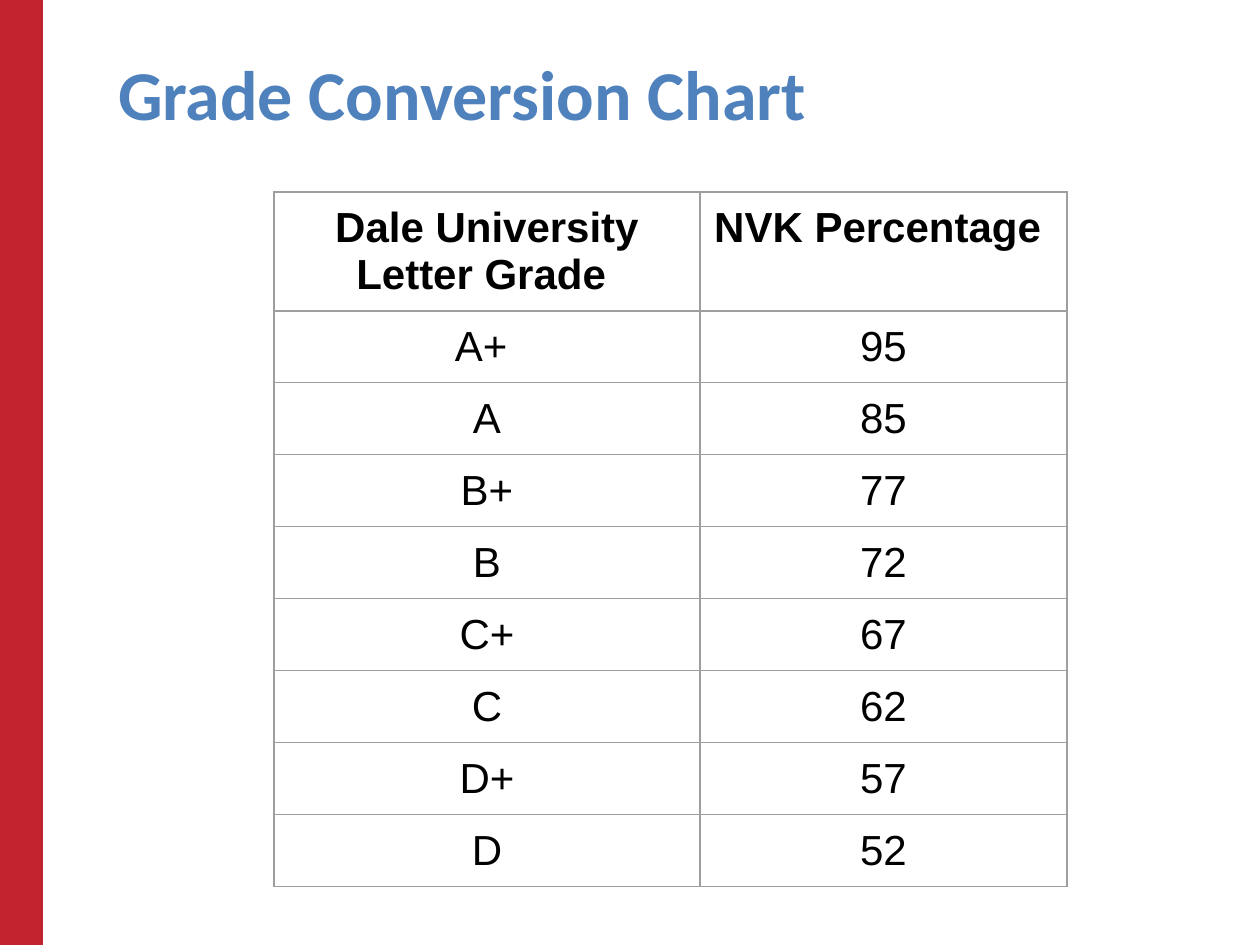
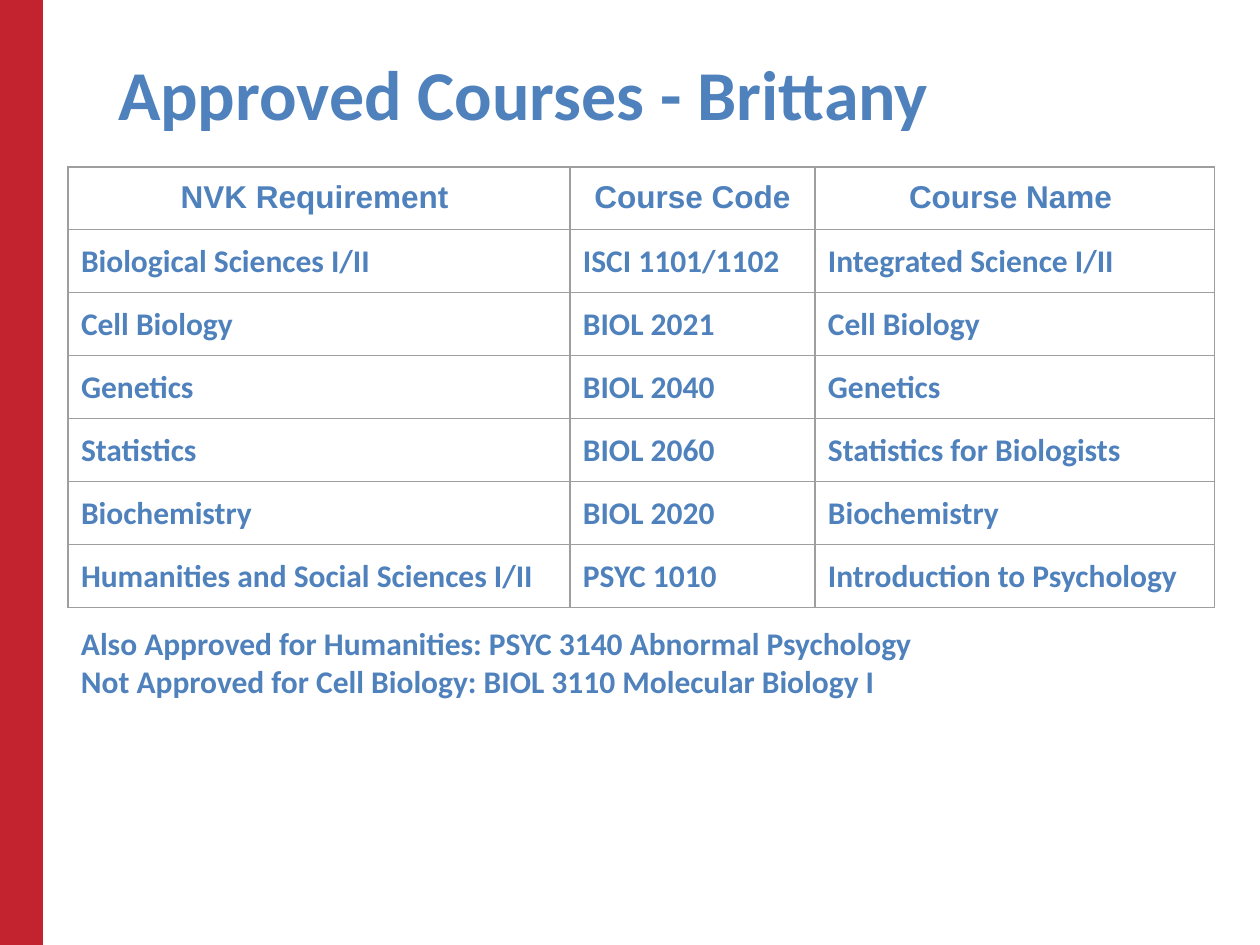
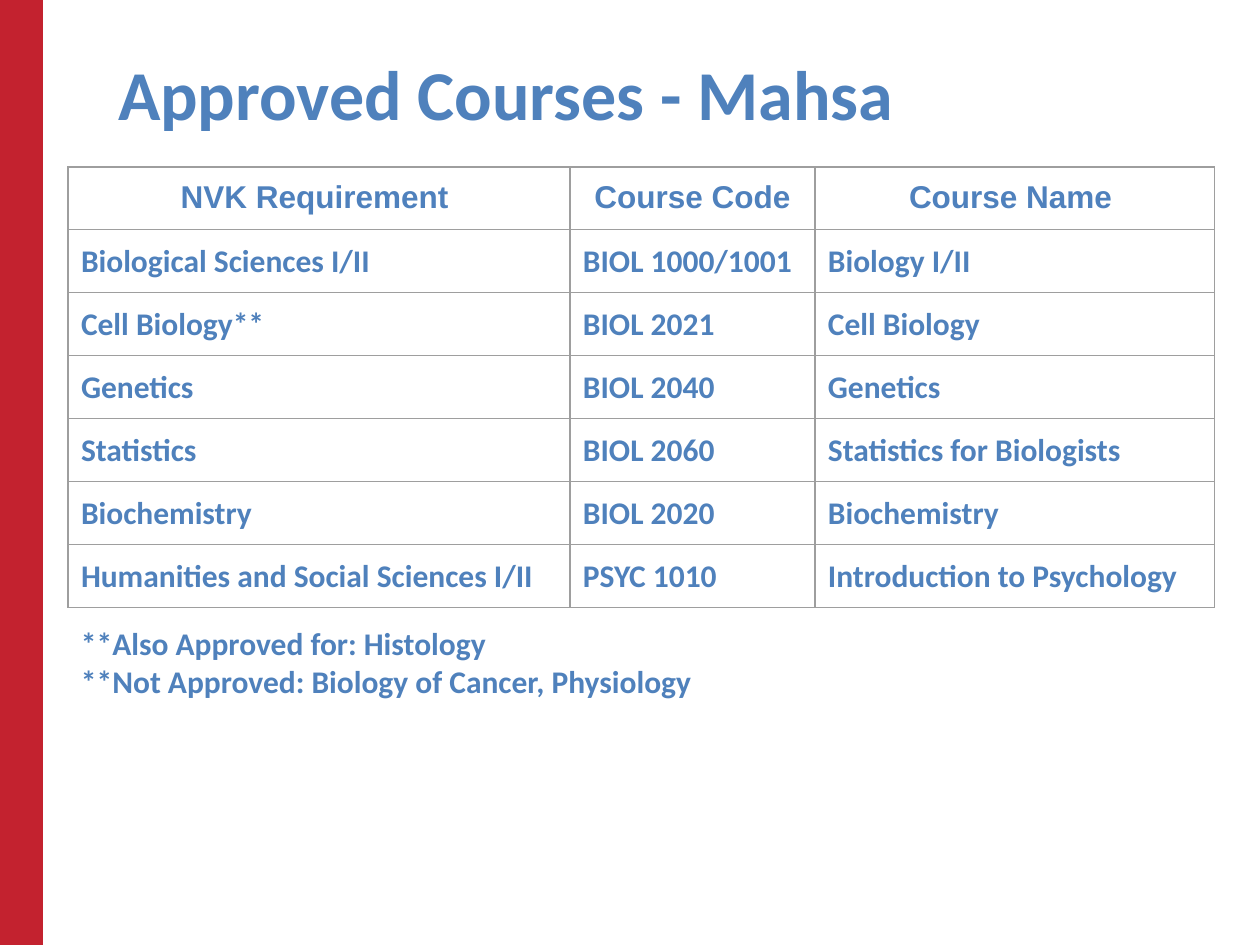
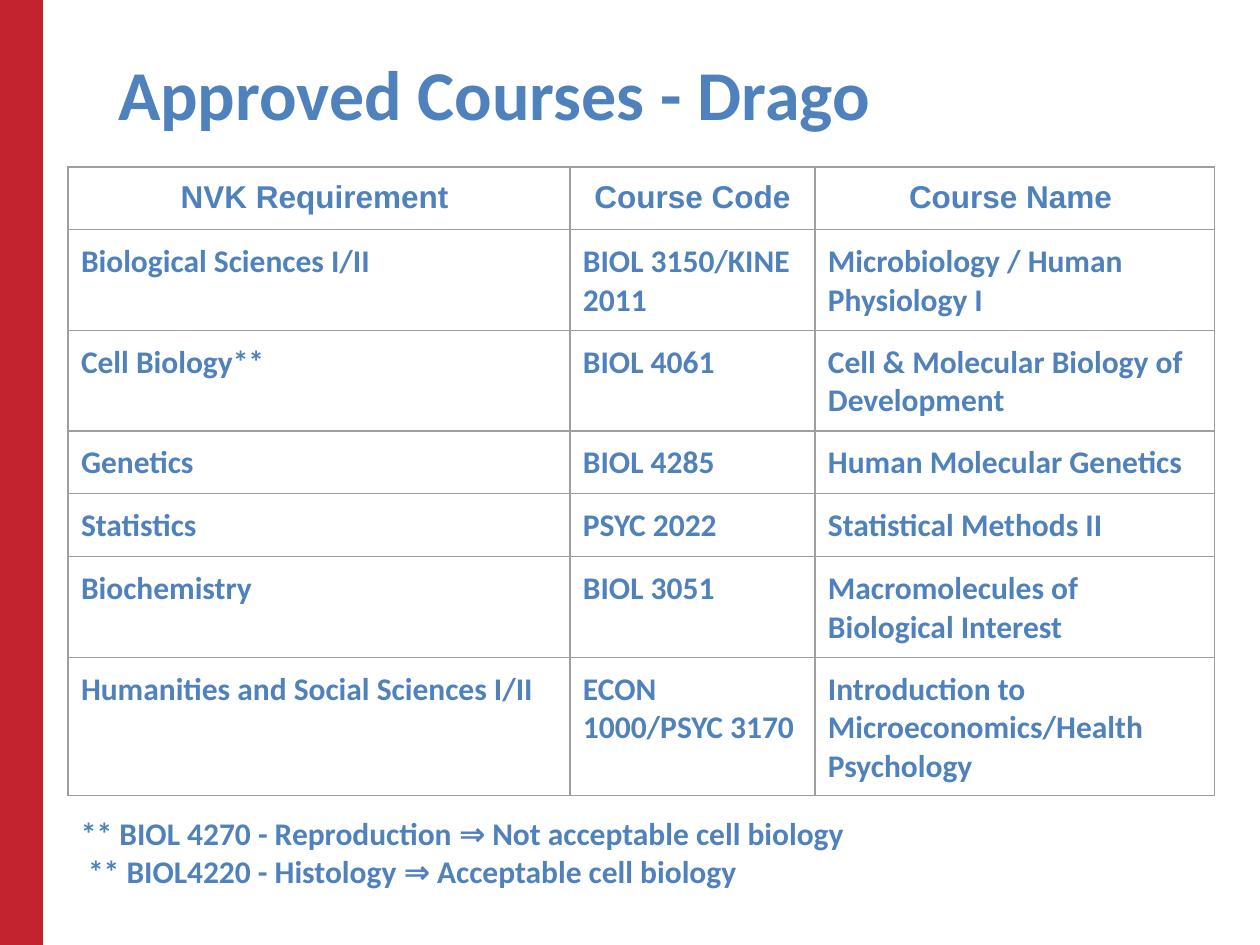
"""Build four slides of grade conversion and approved courses."""
from lxml.etree import SubElement
from pptx import Presentation
from pptx.dml.color import RGBColor
from pptx.enum.shapes import MSO_SHAPE
from pptx.enum.text import MSO_ANCHOR, MSO_AUTO_SIZE, PP_ALIGN
from pptx.oxml.ns import qn
from pptx.util import Pt

PX = 7257
SLIDE_W, SLIDE_H = 1260, 945
INSET = 13
CELL_BOTTOM = 12
RED = RGBColor(0xC3, 0x22, 0x2F)
BLUE = RGBColor(0x4F, 0x81, 0xBC)
HEADER_BLUE = RGBColor(0x4F, 0x81, 0xBD)
BLACK = RGBColor(0, 0, 0)
GRID_GREY = RGBColor(0x9E, 0x9E, 0x9E)

GRADES = [
    ("Dale University Letter Grade ", "NVK Percentage "),
    ("A+ ", "95"), ("A", "85"), ("B+", "77"), ("B", "72"),
    ("C+", "67"), ("C", "62"), ("D+", "57"), ("D", "52"),
]
COURSE_HEADER = ("NVK Requirement ", "Course Code", "Course Name ")
SHARED_COURSES = [
    ("Genetics", "BIOL 2040", "Genetics"),
    ("Statistics", "BIOL 2060", "Statistics for Biologists"),
    ("Biochemistry", "BIOL 2020", "Biochemistry"),
    ("Humanities and Social Sciences I/II", "PSYC 1010", "Introduction to Psychology"),
]
STUDENTS = [
    ("Brittany", [
        ("Biological Sciences I/II", "ISCI 1101/1102", "Integrated Science I/II"),
        ("Cell Biology", "BIOL 2021", "Cell Biology"),
        *SHARED_COURSES,
    ], 611, [
        "Also Approved for Humanities: PSYC 3140 Abnormal Psychology",
        "Not Approved for Cell Biology: BIOL 3110 Molecular Biology I",
    ]),
    ("Mahsa", [
        ("Biological Sciences I/II", "BIOL 1000/1001", "Biology I/II"),
        ("Cell Biology**", "BIOL 2021", "Cell Biology"),
        *SHARED_COURSES,
    ], 611, [
        "**Also Approved for: Histology",
        "**Not Approved: Biology of Cancer, Physiology",
    ]),
    ("Drago", [
        ("Biological Sciences I/II", "BIOL 3150/KINE 2011", "Microbiology / Human Physiology I"),
        ("Cell Biology**", "BIOL 4061", "Cell & Molecular Biology of Development"),
        ("Genetics", "BIOL 4285", "Human Molecular Genetics"),
        ("Statistics", "PSYC 2022", "Statistical Methods II"),
        ("Biochemistry", "BIOL 3051", "Macromolecules of Biological Interest"),
        ("Humanities and Social Sciences I/II", "ECON 1000/PSYC 3170",
         "Introduction to Microeconomics/Health Psychology"),
    ], 801, [
        "** BIOL 4270 - Reproduction ⇒ Not acceptable cell biology",
        " ** BIOL4220 - Histology ⇒ Acceptable cell biology",
    ]),
]


def write(paragraph, text, font, size, color, bold=True, align=PP_ALIGN.LEFT):
    """Add one formatted run to a paragraph."""
    paragraph.alignment = align
    run = paragraph.add_run()
    run.text = text
    run.font.name = font
    run.font.size = Pt(size)
    run.font.bold = bold
    run.font.color.rgb = color


def add_grid(slide, left, top, widths, heights, rows, header_style, body_style):
    """Add a bordered table whose first row is the header."""
    frame = slide.shapes.add_table(len(rows), len(widths), left * PX, top * PX,
                                   sum(widths) * PX, sum(heights) * PX)
    grid = frame.table
    grid.horz_banding = False
    for column, width in zip(grid.columns, widths):
        column.width = width * PX
    for r, texts in enumerate(rows):
        grid.rows[r].height = heights[r] * PX
        for c, text in enumerate(texts):
            cell = grid.cell(r, c)
            cell.margin_left = cell.margin_right = cell.margin_top = INSET * PX
            cell.margin_bottom = CELL_BOTTOM * PX
            properties = cell._tc.get_or_add_tcPr()
            for side in ("a:lnL", "a:lnR", "a:lnT", "a:lnB"):
                border = SubElement(properties, qn(side), w=str(Pt(0.75)))
                fill = SubElement(border, qn("a:solidFill"))
                SubElement(fill, qn("a:srgbClr"), val=str(GRID_GREY))
            cell.fill.background()
            write(cell.text_frame.paragraphs[0], text, *(body_style if r else header_style))


presentation = Presentation()
presentation.slide_width = SLIDE_W * PX
presentation.slide_height = SLIDE_H * PX
title_only = presentation.slide_layouts[5]

slides = []
for heading in ["Grade Conversion Chart"] + [f"Approved Courses - {s[0]}" for s in STUDENTS]:
    slide = presentation.slides.add_slide(title_only)
    title = slide.shapes.title
    title.left, title.top, title.width, title.height = 105 * PX, 38 * PX, 1050 * PX, 139 * PX
    title_frame = title.text_frame
    title_frame.auto_size = MSO_AUTO_SIZE.NONE
    title_frame.vertical_anchor = MSO_ANCHOR.TOP
    title_frame.margin_left = title_frame.margin_right = INSET * PX
    title_frame.margin_top = title_frame.margin_bottom = INSET * PX
    write(title_frame.paragraphs[0], heading, "Calibri", 40, BLUE)
    slides.append(slide)

red_band = slides[0].shapes.add_shape(MSO_SHAPE.RECTANGLE, 0, 0, 43 * PX, SLIDE_H * PX)
red_band.shadow.inherit = False
red_band.fill.solid()
red_band.fill.fore_color.rgb = RED
red_band.line.fill.background()
title_only.shapes.element.insert(2, red_band.element)

add_grid(slides[0], 274, 192, [426, 367], [119] + [72] * 8, GRADES,
         ("Arial", 24, BLACK, True, PP_ALIGN.CENTER),
         ("Arial", 24, BLACK, False, PP_ALIGN.CENTER))

for slide, (student, courses, notes_top, notes) in zip(slides[1:], STUDENTS):
    notes_height = min(214, SLIDE_H - notes_top)
    notes_box = slide.shapes.add_textbox(68 * PX, notes_top * PX, 874 * PX, notes_height * PX)
    notes_frame = notes_box.text_frame
    notes_frame.word_wrap = True
    notes_frame.margin_left = notes_frame.margin_right = INSET * PX
    notes_frame.margin_top = notes_frame.margin_bottom = INSET * PX
    for n, note in enumerate(notes):
        paragraph = notes_frame.add_paragraph() if n else notes_frame.paragraphs[0]
        write(paragraph, note, "Calibri", 18, BLUE)
    add_grid(slide, 68, 167, [502, 245, 400], [61] + [63] * len(courses),
             [COURSE_HEADER] + courses,
             ("Arial", 18, HEADER_BLUE, True, PP_ALIGN.CENTER),
             ("Calibri", 18, BLUE))

presentation.save("out.pptx")
